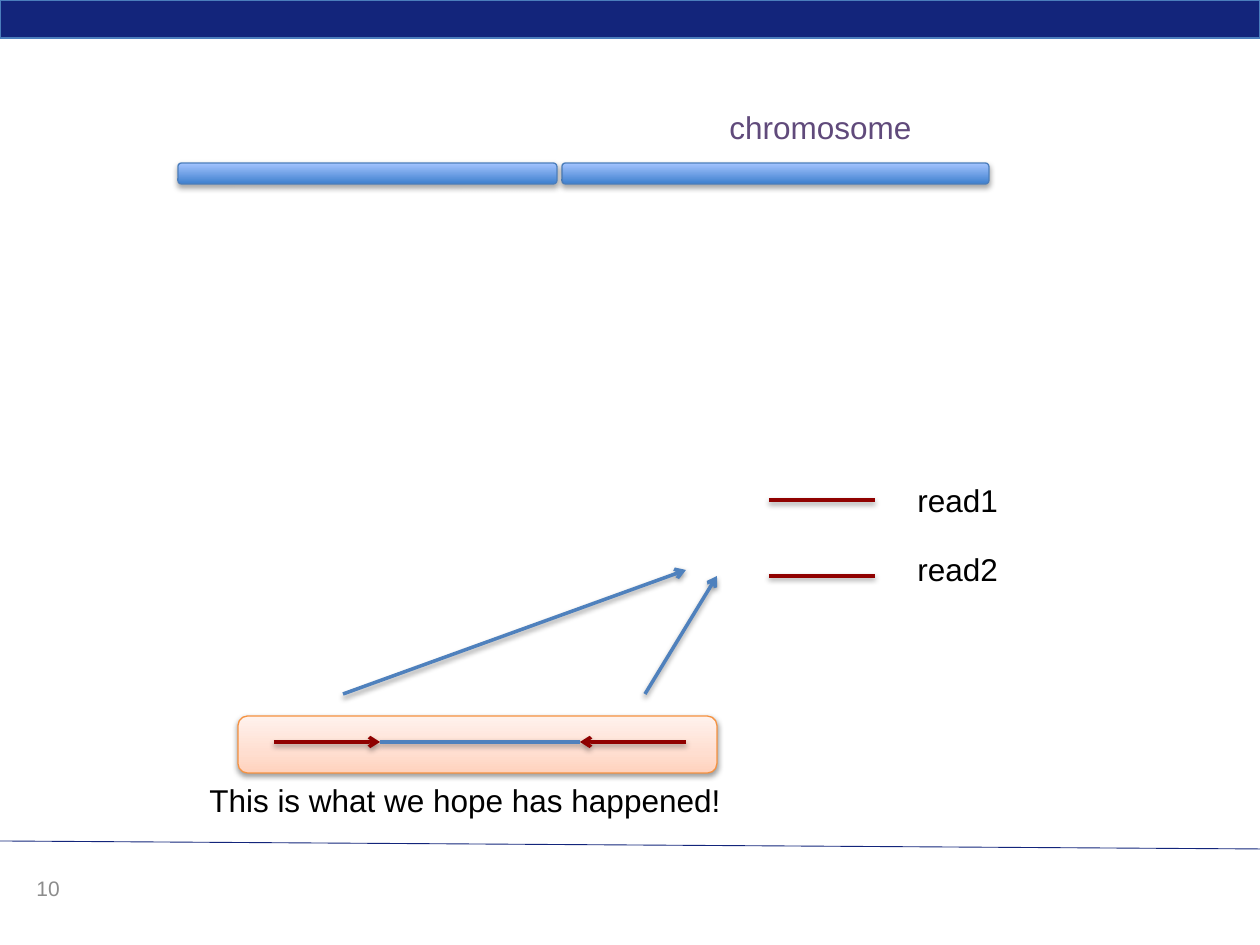
"""Build a slide showing paired reads and the chromosome they come from."""
from lxml.etree import SubElement
from pptx import Presentation
from pptx.dml.color import RGBColor
from pptx.enum.shapes import MSO_CONNECTOR as Connector, MSO_SHAPE as Shape
from pptx.oxml.ns import qn
from pptx.util import Emu, Pt

THEME = {
    "navy": "13257B", "outline": "4B7EBC", "orange": "F69240",
    "red": "900100", "blue": "4F81BD", "purple": "604A7B",
    "black": "000000", "gray": "8C8C8C",
    "blue_gradient": [(0, "3F80CE"), (100, "A4C4FF")],
    "peach_gradient": [(0, "FFD2BD"), (35, "FFDED0"), (100, "FFF2ED")],
    "font": "Arial", "label": 18, "number": 12, "thin": 0.5, "edge": 0.75, "thick": 2,
}
SLIDE = (1260, 945)
HEADER = (0, 0, 1260, 38)
FOOTER = (1260, 849, 0, 841)

CHROMOSOME = [(562, 163, 427, 21), (178, 163, 379, 21)]
FRAGMENT = (238, 716, 479, 57)
READ_WIDTH, READ_Y = 106, 742
LEFT_READ, RIGHT_READ = 274, 686
LEGEND_LEFT = 769
LEGEND = [("read1", 500, 475), ("read2", 576, 544)]
POINTERS = [(343, 694, 686, 570), (645, 694, 717, 576)]
LABELS = [
    ("chromosome", (717, 102, 209, 50), "purple", "label"),
    ("This is what we hope has happened!", (197, 775, 542, 50), "black", "label"),
    ("10", (24, 869, 57, 50), "gray", "number"),
]


def px(value):
    return Emu(round(value * 914400 / 126))


def color(name):
    return RGBColor.from_string(THEME[name])


def add_shadow(shape, opacity=None, distance=20000):
    effects = SubElement(shape._element.spPr, qn("a:effectLst"))
    if opacity:
        shadow = SubElement(effects, qn("a:outerShdw"), blurRad="40000",
                            dist=str(distance), dir="5400000", rotWithShape="0")
        black = SubElement(shadow, qn("a:srgbClr"), val=THEME["black"])
        SubElement(black, qn("a:alpha"), val=str(opacity * 1000))


def add_bar(slide, kind, box, line):
    shape = slide.shapes.add_shape(kind, *map(px, box))
    shape.line.color.rgb = color(line)
    shape.line.width = Pt(THEME["edge"])
    return shape


def add_gradient_bar(slide, box, gradient, line, opacity, distance):
    shape = add_bar(slide, Shape.ROUNDED_RECTANGLE, box, line)
    shape.fill.gradient()
    shape.fill.gradient_angle = 90
    stops = shape._element.spPr.find(".//" + qn("a:gsLst"))
    stops.clear()
    for position, value in THEME[gradient]:
        stop = SubElement(stops, qn("a:gs"), pos=str(position * 1000))
        SubElement(stop, qn("a:srgbClr"), val=value)
    add_shadow(shape, opacity, distance)


def add_line(slide, ends, name, width="thick", arrow=False, opacity=38):
    line = slide.shapes.add_connector(Connector.STRAIGHT, *map(px, ends))
    line.line.color.rgb = color(name)
    line.line.width = Pt(THEME[width])
    if arrow:
        SubElement(line.line._ln, qn("a:tailEnd"), type="arrow")
    add_shadow(line, opacity)


def add_label(slide, text, box, name, size):
    frame = slide.shapes.add_textbox(*map(px, box)).text_frame
    frame.word_wrap = False
    frame.text = text
    font = frame.paragraphs[0].runs[0].font
    font.name, font.size, font.color.rgb = THEME["font"], Pt(THEME[size]), color(name)


def main():
    presentation = Presentation()
    presentation.slide_width, presentation.slide_height = map(px, SLIDE)
    slide = presentation.slides.add_slide(presentation.slide_layouts[6])

    header = add_bar(slide, Shape.RECTANGLE, HEADER, "outline")
    header.fill.solid()
    header.fill.fore_color.rgb = color("navy")
    header.shadow.inherit = False
    add_line(slide, FOOTER, "navy", "thin", opacity=None)

    for box in CHROMOSOME:
        add_gradient_bar(slide, box, "blue_gradient", "outline", 35, 23000)

    add_gradient_bar(slide, FRAGMENT, "peach_gradient", "orange", 38, 20000)
    left_tip, right_tip = LEFT_READ + READ_WIDTH, RIGHT_READ - READ_WIDTH
    add_line(slide, (RIGHT_READ, READ_Y, right_tip, READ_Y), "red", arrow=True)
    add_line(slide, (LEFT_READ, READ_Y, left_tip, READ_Y), "red", arrow=True)
    add_line(slide, (left_tip, READ_Y, right_tip, READ_Y), "blue")

    for text, line_y, label_y in LEGEND:
        add_line(slide, (LEGEND_LEFT, line_y, LEGEND_LEFT + READ_WIDTH, line_y), "red")
        add_label(slide, text, (905, label_y, 107, 50), "black", "label")
    for ends in POINTERS:
        add_line(slide, ends, "blue", arrow=True)
    for label in LABELS:
        add_label(slide, *label)

    presentation.save("out.pptx")


if __name__ == "__main__":
    main()
